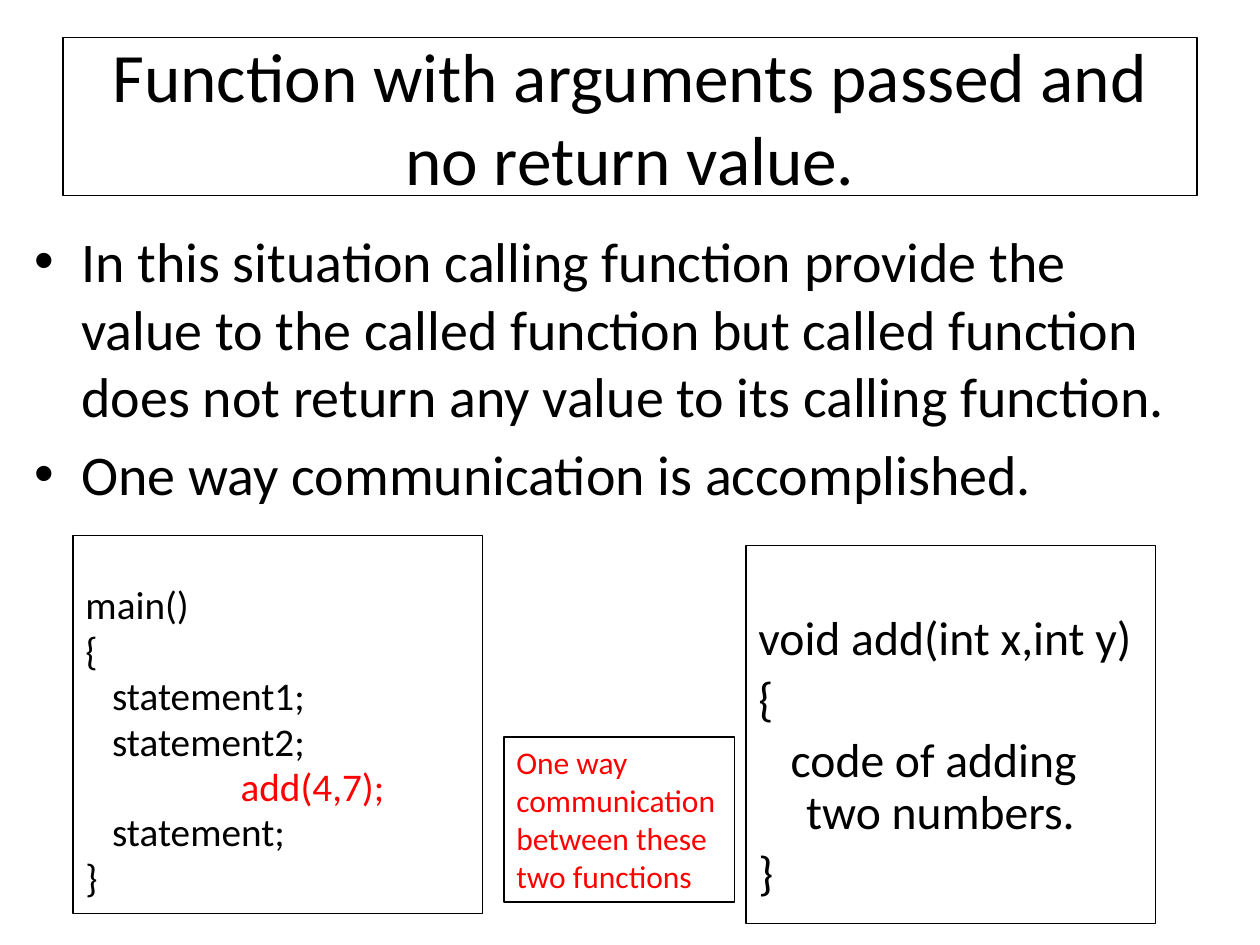
"""Build a slide on functions that take arguments and return no value."""
import pptx
import pptx.dml.color
import pptx.enum.shapes
import pptx.enum.text
import pptx.util
from dataclasses import dataclass

Inches = pptx.util.Inches
Pt = pptx.util.Pt
RGBColor = pptx.dml.color.RGBColor
Align = pptx.enum.text.PP_ALIGN
Anchor = pptx.enum.text.MSO_ANCHOR


@dataclass(frozen=True)
class Theme:
    font: str = "Calibri"
    ink: RGBColor = RGBColor(0, 0, 0)
    accent: RGBColor = RGBColor(255, 0, 0)
    title: float = 39.6
    body: float = 32
    caller: float = 22.4
    called: float = 27.2
    note: float = 18
    border: float = 0.75


theme = Theme()


def style(para, size, color=theme.ink):
    para.font.name = theme.font
    para.font.size = Pt(size)
    para.font.color.rgb = color


def add_panel(page, left, top, width, height):
    box = page.shapes.add_shape(
        pptx.enum.shapes.MSO_SHAPE.RECTANGLE,
        Inches(left), Inches(top), Inches(width), Inches(height))
    box.shadow.inherit = False
    box.fill.background()
    box.line.color.rgb = theme.ink
    box.line.width = Pt(theme.border)
    box.text_frame.word_wrap = True
    box.text_frame.vertical_anchor = Anchor.TOP
    return box


deck = pptx.Presentation()
deck.slide_width, deck.slide_height = Inches(10), Inches(7.5)
page = deck.slides.add_slide(deck.slide_layouts[1])

title = page.shapes.title
title.left, title.top, title.width, title.height = map(Inches, (0.5, 0.3, 9, 1.25))
title.line.color.rgb = theme.ink
title.line.width = Pt(theme.border)
title.text_frame.text = "Function with arguments passed and no return value."
title.text_frame.auto_size = pptx.enum.text.MSO_AUTO_SIZE.NONE
title.text_frame.vertical_anchor = Anchor.MIDDLE
title.text_frame.paragraphs[0].alignment = Align.CENTER
style(title.text_frame.paragraphs[0], theme.title)

body = page.placeholders[1]
body.left, body.top, body.width, body.height = map(Inches, (0.17, 1.75, 9.33, 2.42))
body.text_frame.text = "\n".join([
    "In this situation calling function provide the value to the called function "
    "but called function does not return any value to its calling function.",
    "One way communication is accomplished.",
])
body.text_frame.auto_size = pptx.enum.text.MSO_AUTO_SIZE.NONE
for index, para in enumerate(body.text_frame.paragraphs):
    para.space_before = Pt(0.2 * theme.body if index else 0)
    style(para, theme.body)

caller_lines = ["main()", "{", "   statement1;", "   statement2;",
                "    \t\t     add(4,7);", "   statement;", "}"]
called_lines = ["void add(int x,int y)", "{", "   code of adding two numbers.", "}"]
listings = [
    (0.58, 4.25, 0.43, theme.caller, 0.8, caller_lines),
    (5.92, 4.33, 0.55, theme.called, 0.9, called_lines),
]
for left, top, inset, size, spacing, lines in listings:
    box = add_panel(page, left, top, 3.25, 3)
    box.text_frame.margin_top = Inches(inset)
    box.text_frame.text = "\n".join(lines)
    for index, para in enumerate(box.text_frame.paragraphs):
        properties = para._p.get_or_add_pPr()
        properties.set("marL", str(Inches(0.38)))
        properties.set("indent", str(Inches(-0.38)))
        para.alignment = Align.LEFT
        para.line_spacing = spacing
        para.space_before = Pt(0.2 * size if index else 0)
        style(para, size, theme.accent if "add(4,7)" in para.text else theme.ink)

note = add_panel(page, 4, 5.85, 1.83, 1.31)
note.text_frame.text = "One way communication between these two functions"
note.text_frame.auto_size = pptx.enum.text.MSO_AUTO_SIZE.SHAPE_TO_FIT_TEXT
note.text_frame.paragraphs[0].alignment = Align.LEFT
style(note.text_frame.paragraphs[0], theme.note, theme.accent)

deck.save("out.pptx")
